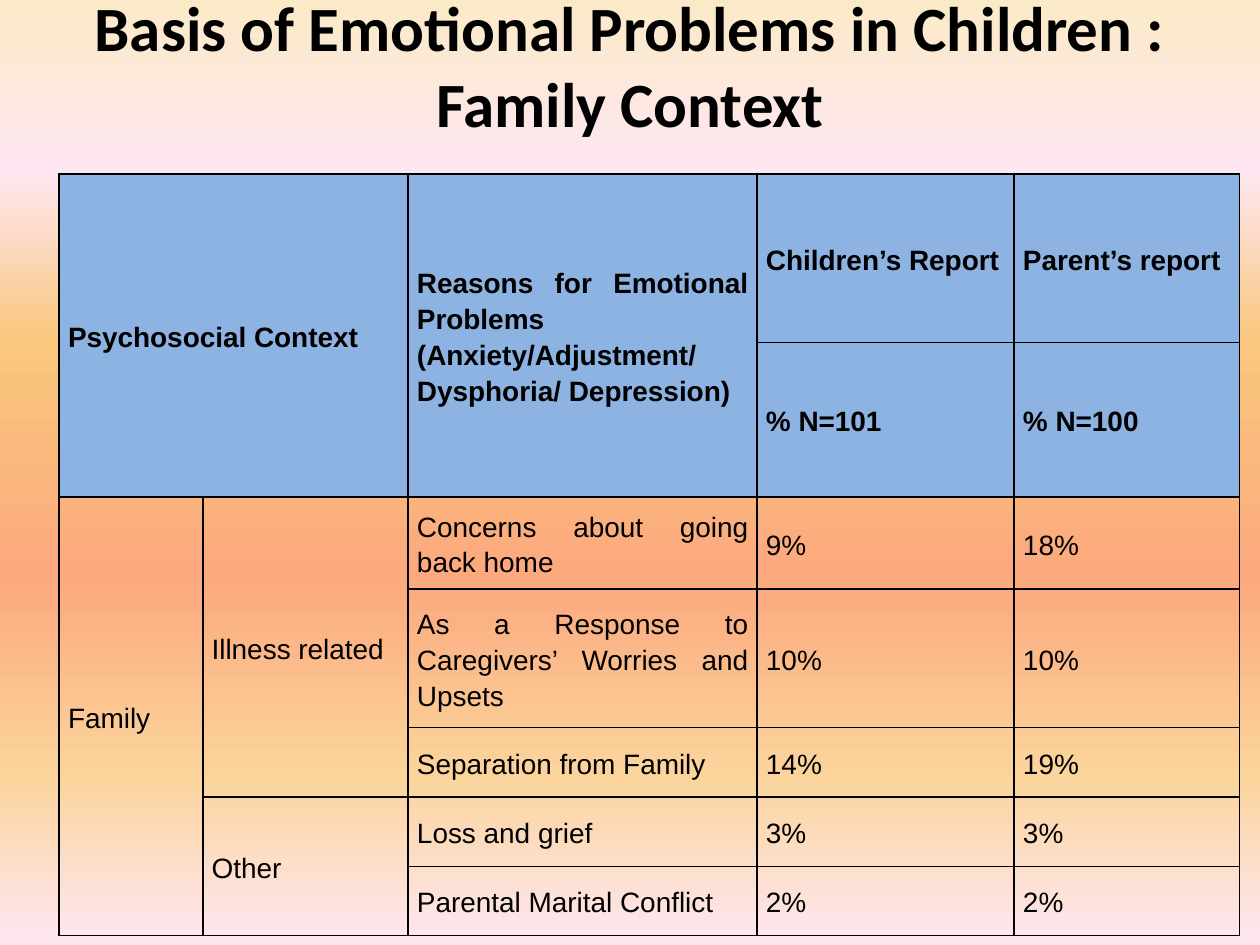
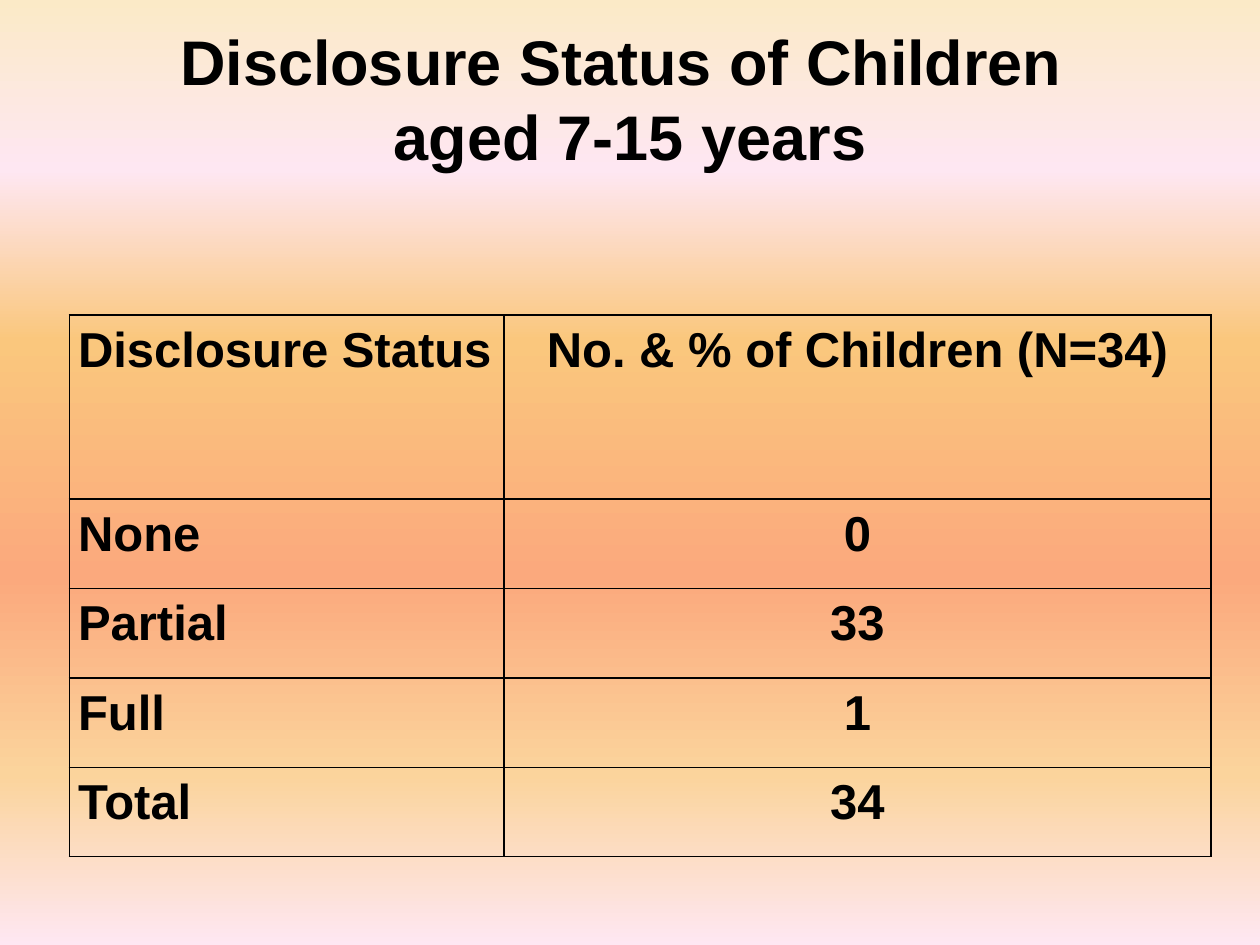
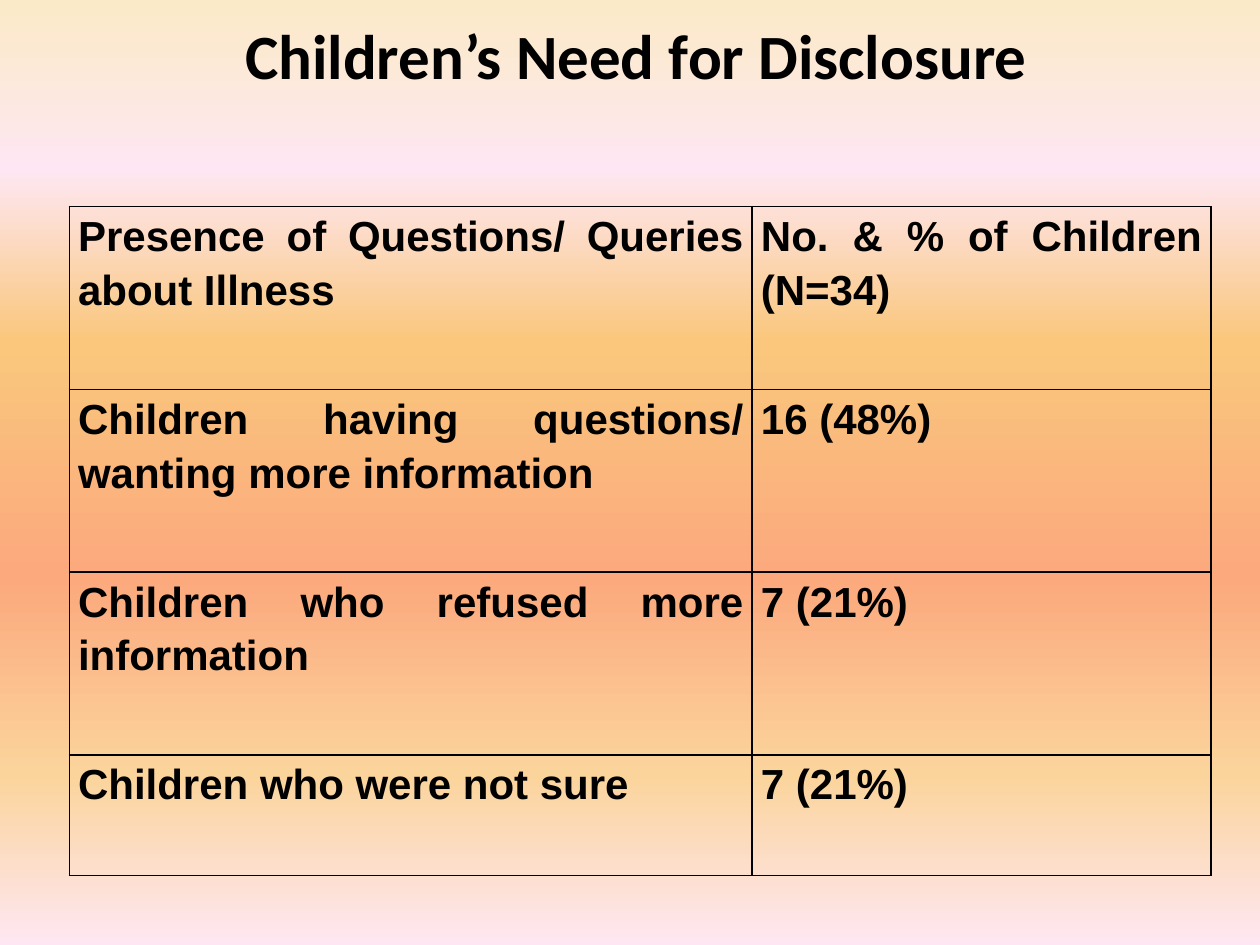
from dataclasses import dataclass

from lxml import etree
from pptx import Presentation
from pptx.dml.color import RGBColor
from pptx.enum.text import MSO_ANCHOR, PP_ALIGN
from pptx.oxml.ns import qn
from pptx.util import Inches, Pt

CENTER, JUSTIFY = PP_ALIGN.CENTER, PP_ALIGN.JUSTIFY
TOP, MIDDLE = MSO_ANCHOR.TOP, MSO_ANCHOR.MIDDLE
BLANK_LAYOUT = 6


@dataclass(frozen=True)
class Theme:
    ink: str = "000000"
    header_fill: str = "8DB3E2"
    background: tuple = ((0, "FBEAC7"), (18, "FEE7F2"), (36, "FAC77D"),
                         (61, "FBA97D"), (82, "FBD49C"), (100, "FEE7F2"))
    title_size: int = 36
    body_font: str = "Arial"
    heading_font: str = "Calibri"
    line_spacing: float = 1.15
    border_width: int = 1
    cell_margin: float = 0.07


THEME = Theme()


@dataclass(frozen=True)
class Title:
    text: str
    box: tuple
    font: str = THEME.heading_font


@dataclass(frozen=True)
class Grid:
    left: float
    top: float
    columns: tuple
    rows: tuple
    cells: tuple  # None marks a cell covered by a merge
    size: int
    alignments: tuple
    anchor: MSO_ANCHOR = TOP
    merges: tuple = ()  # (first row, first column, last row, last column)
    filled_rows: int = 0
    bold_rows: int = 99


# Content of the slides
PAGES = (
    (
        Title("Basis of Emotional Problems in Children : Family Context",
              (0, 0, 10, 1.02)),
        Grid(
            0.47, 1.38,
            columns=(1.14, 1.63, 2.77, 2.04, 1.79),
            rows=(1.34, 0.68, 0.73, 1.1, 0.55, 0.55, 0.55),
            cells=(
                ("Psychosocial Context", None,
                 "Reasons for Emotional Problems (Anxiety/Adjustment/\n"
                 "Dysphoria/ Depression)",
                 "Children’s Report", "Parent’s report"),
                (None, None, None, "% N=101", "% N=100"),
                ("Family", "Illness related", "Concerns about going back home",
                 "9%", "18%"),
                (None, None, "As a Response to Caregivers’ Worries and Upsets",
                 "10%", "10%"),
                (None, None, "Separation from Family", "14%", "19%"),
                (None, "Other", "Loss and grief", "3%", "3%"),
                (None, None, "Parental Marital Conflict", "2%", "2%"),
            ),
            size=16,
            alignments=(JUSTIFY,) * 5,
            anchor=MIDDLE,
            merges=((0, 0, 1, 1), (0, 2, 1, 2), (2, 0, 6, 0),
                    (2, 1, 4, 1), (5, 1, 6, 1)),
            filled_rows=2,
            bold_rows=2,
        ),
    ),
    (
        Title("Disclosure Status of Children \vaged 7-15 years",
              (0, 0, 10, 1.55), THEME.body_font),
        Grid(
            0.55, 2.5,
            columns=(3.45, 5.61),
            rows=(1.46,) + (0.71,) * 4,
            cells=(
                ("Disclosure Status", "No. & % of Children (N=34)"),
                ("None", "0"),
                ("Partial", "33"),
                ("Full", "1"),
                ("Total", "34"),
            ),
            size=28,
            alignments=(JUSTIFY, CENTER),
        ),
    ),
    (
        Title("Children’s Need for Disclosure", (0.55, 0, 9, 0.87)),
        Grid(
            0.55, 1.64,
            columns=(5.42, 3.64),
            rows=(1.45,) * 3 + (0.96,),
            cells=(
                ("Presence of Questions/ Queries about Illness",
                 "No. & % of Children (N=34)"),
                ("Children having questions/ wanting more information",
                 "16 (48%)"),
                ("Children who refused more information ", "7 (21%)"),
                ("Children who were not sure", "7 (21%)"),
            ),
            size=24,
            alignments=(JUSTIFY, JUSTIFY),
        ),
    ),
)


def apply(target, values: dict) -> None:
    for name, value in values.items():
        setattr(target, name, value)


def style_text(text_frame, font: str, size: int, bold: bool,
               alignment: PP_ALIGN, spacing: float) -> None:
    for paragraph in text_frame.paragraphs:
        apply(paragraph, {"alignment": alignment, "line_spacing": spacing})
        for run in paragraph.runs:
            apply(run.font, {"name": font, "size": Pt(size), "bold": bold})
            run.font.color.rgb = RGBColor.from_string(THEME.ink)


def paint_background(master) -> None:
    """Give every slide the shared vertical gradient."""
    fill = master.background.fill
    fill.gradient()
    fill.gradient_angle = 270
    stops = next(master.element.iter(qn("a:gsLst")))
    for stop in list(stops):
        stops.remove(stop)
    for percent, color in THEME.background:
        stop = etree.SubElement(stops, qn("a:gs"), pos=str(percent * 1000))
        etree.SubElement(stop, qn("a:srgbClr"), val=color)


def add_title(slide, title: Title) -> None:
    shape = slide.shapes.add_textbox(*map(Inches, title.box))
    apply(shape.text_frame, {"word_wrap": True, "vertical_anchor": MIDDLE,
                             "text": title.text})
    style_text(shape.text_frame, title.font, THEME.title_size, True, CENTER, 1.0)


def add_borders(cell) -> None:
    properties = cell._tc.get_or_add_tcPr()
    for side in ("lnL", "lnR", "lnT", "lnB"):
        line = etree.SubElement(properties, qn(f"a:{side}"),
                                w=str(Pt(THEME.border_width)))
        solid = etree.SubElement(line, qn("a:solidFill"))
        etree.SubElement(solid, qn("a:srgbClr"), val=THEME.ink)


def style_cell(cell, filled: bool, anchor: MSO_ANCHOR) -> None:
    add_borders(cell)
    if filled:
        cell.fill.solid()
        cell.fill.fore_color.rgb = RGBColor.from_string(THEME.header_fill)
    else:
        cell.fill.background()
    margin = Inches(THEME.cell_margin)
    apply(cell, {"margin_left": margin, "margin_right": margin,
                 "margin_top": 0, "margin_bottom": 0,
                 "vertical_anchor": anchor})


def add_grid(slide, grid: Grid) -> None:
    table = slide.shapes.add_table(
        len(grid.rows), len(grid.columns), Inches(grid.left), Inches(grid.top),
        Inches(sum(grid.columns)), Inches(sum(grid.rows))).table
    apply(table, {"first_row": False, "horz_banding": False})
    for column, width in zip(table.columns, grid.columns):
        column.width = Inches(width)
    for row, height in zip(table.rows, grid.rows):
        row.height = Inches(height)
    for first_row, first_column, last_row, last_column in grid.merges:
        table.cell(first_row, first_column).merge(
            table.cell(last_row, last_column))
    for row_index, texts in enumerate(grid.cells):
        for column_index, text in enumerate(texts):
            cell = table.cell(row_index, column_index)
            style_cell(cell, row_index < grid.filled_rows, grid.anchor)
            if text is not None:
                cell.text = text
                style_text(cell.text_frame, THEME.body_font, grid.size,
                           row_index < grid.bold_rows,
                           grid.alignments[column_index], THEME.line_spacing)


def main() -> None:
    presentation = Presentation()
    apply(presentation, {"slide_width": Inches(10), "slide_height": Inches(7.5)})
    paint_background(presentation.slide_master)
    for title, grid in PAGES:
        slide = presentation.slides.add_slide(
            presentation.slide_layouts[BLANK_LAYOUT])
        add_title(slide, title)
        add_grid(slide, grid)
    presentation.save("out.pptx")


if __name__ == "__main__":
    main()
